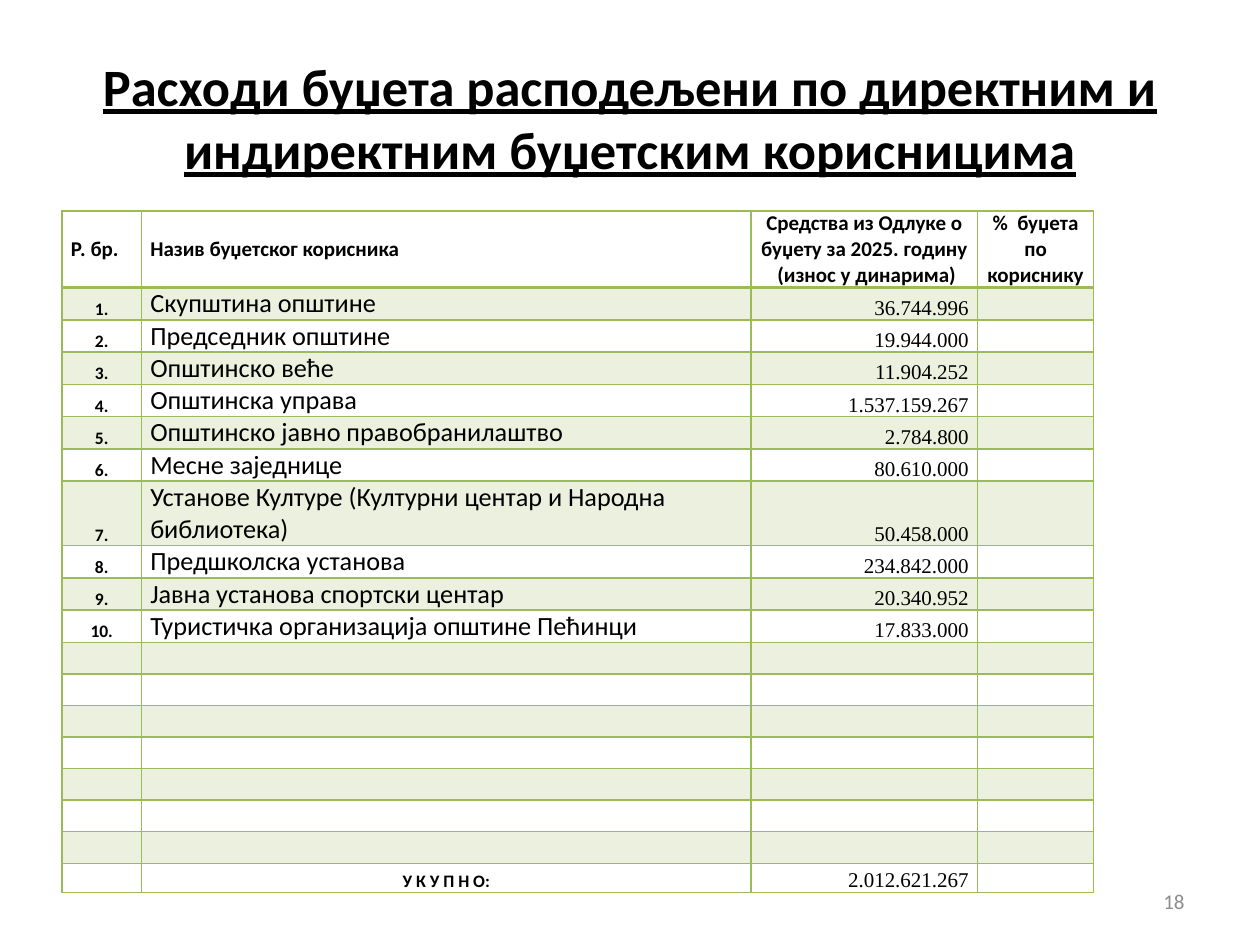
from lxml import etree
from pptx import Presentation
from pptx.dml.color import RGBColor
from pptx.enum.text import MSO_ANCHOR, PP_ALIGN
from pptx.oxml.ns import qn
from pptx.util import Cm, Pt

LEFT, CENTER, RIGHT = PP_ALIGN.LEFT, PP_ALIGN.CENTER, PP_ALIGN.RIGHT
MIDDLE, BOTTOM = MSO_ANCHOR.MIDDLE, MSO_ANCHOR.BOTTOM

BLACK, GREY, GREEN, PALE_GREEN = "000000", "8C8C8C", "9BBB59", "EBF1DE"

TITLE = "Расходи буџета расподељени по директним и индиректним буџетским корисницима"
HEADINGS = [
    "Р. бр.",
    "Назив буџетског корисника",
    "Средства из Одлуке о буџету за 2025. годину  (износ у динарима)",
    "%  буџета по кориснику",
]
BENEFICIARIES = [
    ("Скупштина општине", "36.744.996"),
    ("Председник општине", "19.944.000"),
    ("Општинско веће", "11.904.252"),
    ("Општинска управа", "1.537.159.267"),
    ("Општинско јавно правобранилаштво", "2.784.800"),
    ("Месне заједнице", "80.610.000"),
    ("Установе Културе (Културни центар и Народна библиотека)", "50.458.000"),
    ("Предшколска установа", "234.842.000"),
    ("Јавна установа спортски центар", "20.340.952"),
    ("Туристичка организација општине Пећинци", "17.833.000"),
]
TOTAL = ["", "У К У П Н О:", "2.012.621.267", ""]
SPARE_ROWS = 7
TWO_LINE_ROW = 7

COLUMN_WIDTHS = [1.6, 12.29, 4.57, 2.33]
HEADER_HEIGHT, NAMED_HEIGHT, SPARE_HEIGHT = 1.55, 0.65, 0.59

TITLE_FONT = {"name": "Calibri", "size": Pt(30), "bold": True, "underline": True}
HEADING_FONT = {"name": "Calibri", "size": Pt(12), "bold": True}
ORDINAL_FONT = {"name": "Calibri", "size": Pt(10), "bold": True}
NAME_FONT = {"name": "Calibri", "size": Pt(15), "bold": False}
AMOUNT_FONT = {"name": "Times New Roman", "size": Pt(12), "bold": False}
PAGE_FONT = {"name": "Calibri", "size": Pt(12)}

HEADING_FORMATS = [(HEADING_FONT, align) for align in (LEFT, LEFT, CENTER, CENTER)]
BODY_FORMATS = [(ORDINAL_FONT, CENTER), (NAME_FONT, LEFT),
                (AMOUNT_FONT, RIGHT), (ORDINAL_FONT, CENTER)]
TOTAL_FORMATS = [(ORDINAL_FONT, CENTER), (ORDINAL_FONT, CENTER),
                 (AMOUNT_FONT, RIGHT), (ORDINAL_FONT, CENTER)]
CELL_MARGINS = {"margin_left": Cm(0.18), "margin_right": Cm(0.18),
                "margin_top": 0, "margin_bottom": 0}


def rgb(color):
    return RGBColor.from_string(color)


def apply(target, values):
    for attribute, value in values.items():
        setattr(target, attribute, value)


def write(frame, text, font, align, color=BLACK):
    paragraph = frame.paragraphs[0]
    paragraph.alignment = align
    if text:
        run = paragraph.add_run()
        run.text = text
        apply(run.font, font)
        run.font.color.rgb = rgb(color)
    else:
        etree.SubElement(paragraph._p, qn("a:endParaRPr"), sz=str(int(font["size"].pt * 100)))


def add_text(slide, box, text, font, align, color=BLACK):
    frame = slide.shapes.add_textbox(*map(Cm, box)).text_frame
    apply(frame, {"word_wrap": True, "vertical_anchor": MIDDLE})
    write(frame, text, font, align, color)


def draw_borders(cell, widths):
    properties = cell._tc.get_or_add_tcPr()
    for side, width in widths.items():
        line = etree.SubElement(properties, qn(f"a:ln{side}"), w=str(Pt(width)))
        fill = etree.SubElement(line, qn("a:solidFill"))
        etree.SubElement(fill, qn("a:srgbClr"), val=GREEN)


def fill_row(cells, texts, formats, anchor, borders, shaded):
    for cell, text, (font, align) in zip(cells, texts, formats):
        apply(cell, {**CELL_MARGINS, "vertical_anchor": anchor})
        draw_borders(cell, borders)
        if shaded:
            cell.fill.solid()
            cell.fill.fore_color.rgb = rgb(PALE_GREEN)
        else:
            cell.fill.background()
        write(cell.text_frame, text, font, align)


def add_budget_table(slide, left, top):
    named = [[f"{number}.", name, amount, ""]
             for number, (name, amount) in enumerate(BENEFICIARIES, 1)]
    spare = [[""] * len(HEADINGS) for _ in range(SPARE_ROWS)]
    body = named + spare + [TOTAL]
    heights = [HEADER_HEIGHT] + [NAMED_HEIGHT] * len(named) + [SPARE_HEIGHT] * (SPARE_ROWS + 1)
    heights[TWO_LINE_ROW] *= 2

    table = slide.shapes.add_table(
        len(heights), len(COLUMN_WIDTHS), Cm(left), Cm(top),
        Cm(sum(COLUMN_WIDTHS)), Cm(sum(heights))).table
    apply(table, {"first_row": False, "horz_banding": False})
    for column, width in zip(table.columns, COLUMN_WIDTHS):
        column.width = Cm(width)
    for row, height in zip(table.rows, heights):
        row.height = Cm(height)

    header, *body_rows = table.rows
    fill_row(header.cells, HEADINGS, HEADING_FORMATS, MIDDLE,
             {"L": 1, "R": 1, "T": 1, "B": 2}, False)
    for index, (row, texts) in enumerate(zip(body_rows, body)):
        formats = TOTAL_FORMATS if texts is TOTAL else BODY_FORMATS
        top_width = 2 if index == 0 else 1
        fill_row(row.cells, texts, formats, BOTTOM,
                 {"L": 1, "R": 1, "T": top_width, "B": 1}, index % 2 == 0)


def main():
    presentation = Presentation()
    apply(presentation, {"slide_width": Cm(25.4), "slide_height": Cm(19.05)})
    slide = presentation.slides.add_slide(presentation.slide_layouts[6])
    add_text(slide, (1.27, 0.76, 22.86, 3.18), TITLE, TITLE_FONT, CENTER)
    add_budget_table(slide, 1.25, 4.25)
    add_text(slide, (18.2, 17.66, 5.93, 1.01), "18", PAGE_FONT, RIGHT, GREY)
    presentation.save("out.pptx")


if __name__ == "__main__":
    main()
